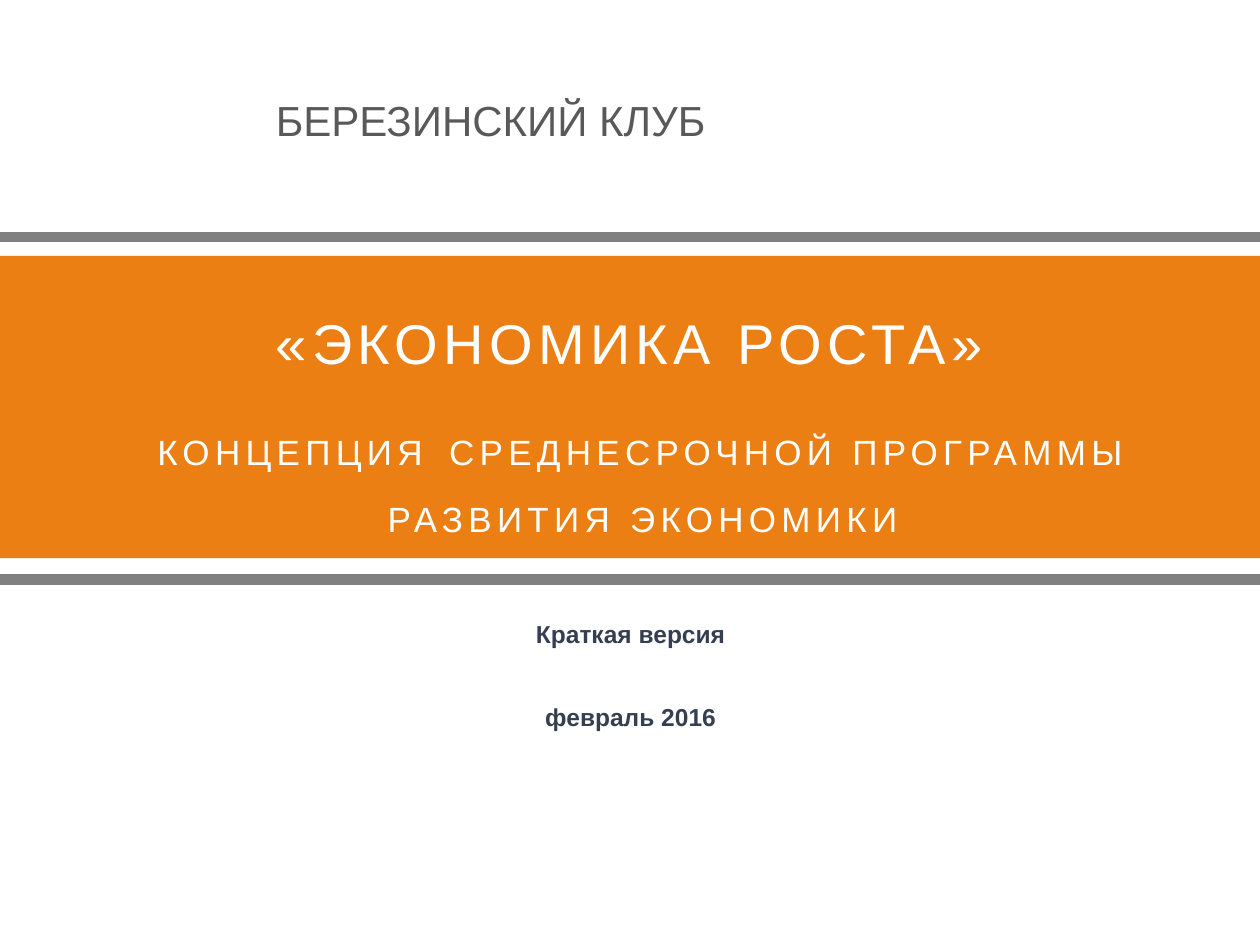
"""Build the cover slide of an economic growth programme."""
from pptx import Presentation, util as u
from pptx.dml.color import RGBColor
from pptx.enum import shapes, text
from pptx.oxml import parse_xml
from pptx.oxml.ns import nsdecls

COLORS = {"orange": "EB7F13", "white": "FFFFFF", "navy": "363F52",
          "rule": "808080", "heading": "595959"}


def add_run(p, content, size, color, bold=False, spacing=None):
    r = p.add_run()
    r.text = content
    r.font.name = "Arial"
    r.font.size = u.Pt(size)
    r.font.bold = bold
    r.font.color.rgb = RGBColor.from_string(COLORS[color])
    if spacing:
        r.font._element.set("spc", str(spacing * 100))


prs = Presentation()
prs.slide_width, prs.slide_height = u.Inches(10), u.Inches(7.5)
s = prs.slides.add_slide(prs.slide_layouts[5])

title = s.shapes.title
title.left, title.top = u.Inches(0), u.Inches(2.03)
title.width, title.height = u.Inches(10), u.Inches(2.4)
title.fill.solid()
title.fill.fore_color.rgb = RGBColor.from_string(COLORS["orange"])
tf = title.text_frame
tf.word_wrap = True
tf.auto_size = text.MSO_AUTO_SIZE.NONE
tf.vertical_anchor = text.MSO_ANCHOR.MIDDLE
p = tf.paragraphs[0]
p.alignment = text.PP_ALIGN.CENTER
p.line_spacing = 1.5
p._p.get_or_add_pPr().set("marL", str(u.Inches(0.2)))
add_run(p, "«ЭКОНОМИКА РОСТА» ", 32, "white", spacing=3)
p.add_line_break()
for content, size in [("КОНЦЕПЦИЯ", 20), (" ", 32),
                      ("СРЕДНЕСРОЧНОЙ ПРОГРАММЫ РАЗВИТИЯ ЭКОНОМИКИ", 20)]:
    add_run(p, content, size, "white", spacing=3)

table = s.shapes.add_table(1, 1, u.Inches(0.13), u.Inches(4.64),
                           u.Inches(9.75), u.Inches(2.51)).table
cell = table.cell(0, 0)
cell.fill.solid()
cell.fill.fore_color.rgb = RGBColor.from_string(COLORS["white"])
cell.margin_left = cell.margin_right = cell.margin_bottom = u.Inches(0.04)
cell.margin_top = u.Inches(0.29)
tf = cell.text_frame
version, date = tf.paragraphs[0], tf.add_paragraph()
date.space_before = u.Pt(31.5)
for p, content in [(version, "Краткая версия"), (date, "февраль 2016")]:
    p.alignment = text.PP_ALIGN.CENTER
    add_run(p, content, 14, "navy", bold=True)

for y in (4.6, 1.88):
    rule = s.shapes.add_connector(shapes.MSO_CONNECTOR.STRAIGHT, u.Inches(0),
                                  u.Inches(y), u.Inches(10), u.Inches(y))
    rule.line.color.rgb = RGBColor.from_string(COLORS["rule"])
    rule.line.width = u.Pt(6)
    rule._element.spPr.append(parse_xml(f"<a:effectLst {nsdecls('a')}/>"))

club = s.shapes.add_textbox(u.Inches(2.08), u.Inches(0.69),
                            u.Inches(8.44), u.Inches(0.52))
tf = club.text_frame
tf.word_wrap = True
tf.auto_size = text.MSO_AUTO_SIZE.SHAPE_TO_FIT_TEXT
tf.margin_left = tf.margin_right = u.Inches(0.11)
tf.margin_top = tf.margin_bottom = u.Inches(0.06)
add_run(tf.paragraphs[0], "БЕРЕЗИНСКИЙ КЛУБ", 24, "heading")

prs.save("out.pptx")
